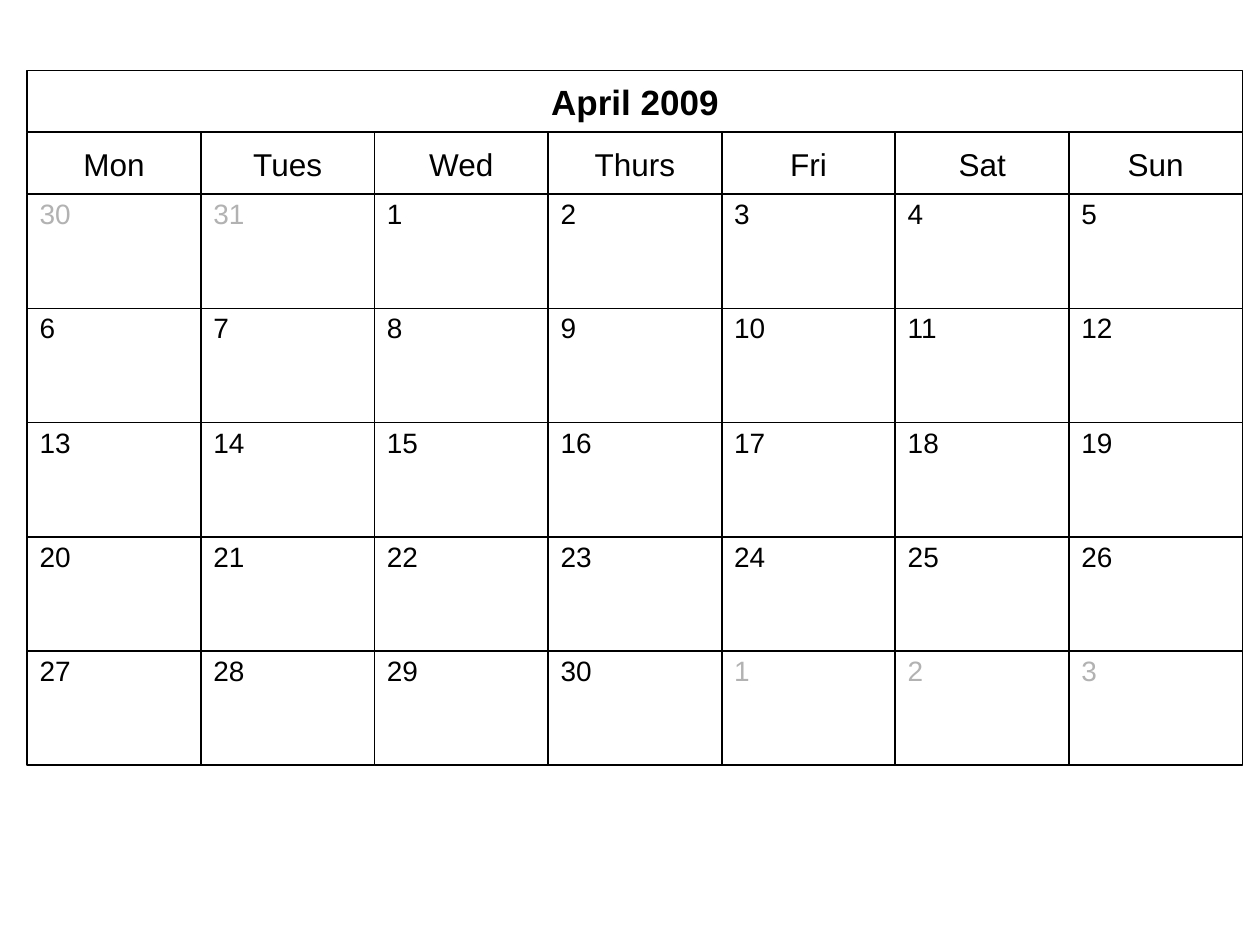
from pptx import Presentation
from pptx.dml.color import RGBColor
from pptx.enum.shapes import MSO_SHAPE
from pptx.enum.text import MSO_ANCHOR, PP_ALIGN
from pptx.util import Cm, Pt

RECTANGLE = MSO_SHAPE.RECTANGLE
TOP, MIDDLE = MSO_ANCHOR.TOP, MSO_ANCHOR.MIDDLE
LEFT, CENTER = PP_ALIGN.LEFT, PP_ALIGN.CENTER

COLORS = {"paper": "FFFFFF", "ink": "000000", "other_month": "B2B2B2"}

MONTH = "April 2009"
WEEKDAYS = ["Mon", "Tues", "Wed", "Thurs", "Fri", "Sat", "Sun"]
PREVIOUS_DAYS = [30, 31]
MONTH_DAYS = list(range(1, 31))
NEXT_DAYS = [1, 2, 3]

GRID_LEFT, GRID_TOP = 0.55, 1.42
DAY_WIDTH, DAY_HEIGHT = 3.5, 2.3
HEADER_HEIGHT = 1.25
HANGING = Cm(0.95)

FRAME_FORMAT = {
    "margin_left": Cm(0.25),
    "margin_right": Cm(0.25),
    "margin_top": Cm(0.05),
    "margin_bottom": Cm(0.05),
    "word_wrap": True,
}
MONTH_FONT = {"name": "Arial", "size": Pt(20), "bold": True}
WEEKDAY_FONT = {"name": "Arial", "size": Pt(18)}
DAY_FONT = {"name": "Arial", "size": Pt(16)}


def color(name):
    return RGBColor.from_string(COLORS[name])


def apply_format(target, values):
    for attribute, value in values.items():
        setattr(target, attribute, value)


def add_box(slide, text, box, font, anchor=MIDDLE, alignment=CENTER, ink="ink"):
    cell = slide.shapes.add_shape(RECTANGLE, *(Cm(length) for length in box))
    cell.shadow.inherit = False
    cell.fill.solid()
    cell.fill.fore_color.rgb = color("paper")
    cell.line.color.rgb = color("ink")
    cell.line.width = Pt(1)

    frame = cell.text_frame
    apply_format(frame, FRAME_FORMAT)
    frame.vertical_anchor = anchor
    label = frame.paragraphs[0]
    label.alignment = alignment
    indents = label._p.get_or_add_pPr()
    indents.set("marL", str(HANGING))
    indents.set("indent", str(-HANGING))
    run = label.add_run()
    run.text = text
    apply_format(run.font, font)
    run.font.color.rgb = color(ink)


def add_headers(slide):
    weekday_top = GRID_TOP + HEADER_HEIGHT
    for column, weekday in reversed(list(enumerate(WEEKDAYS))):
        left = GRID_LEFT + column * DAY_WIDTH
        add_box(slide, weekday, (left, weekday_top, DAY_WIDTH, HEADER_HEIGHT),
                WEEKDAY_FONT)
    month_width = len(WEEKDAYS) * DAY_WIDTH
    add_box(slide, MONTH, (GRID_LEFT, GRID_TOP, month_width, HEADER_HEIGHT),
            MONTH_FONT)


def add_days(slide):
    days = [(day, "other_month") for day in PREVIOUS_DAYS]
    days += [(day, "ink") for day in MONTH_DAYS]
    days += [(day, "other_month") for day in NEXT_DAYS]
    first_week_top = GRID_TOP + 2 * HEADER_HEIGHT
    for position, (day, ink) in reversed(list(enumerate(days))):
        week, column = divmod(position, len(WEEKDAYS))
        left = GRID_LEFT + column * DAY_WIDTH
        top = first_week_top + week * DAY_HEIGHT
        add_box(slide, str(day), (left, top, DAY_WIDTH, DAY_HEIGHT),
                DAY_FONT, TOP, LEFT, ink)


def main():
    presentation = Presentation()
    presentation.slide_width = Cm(25.4)
    presentation.slide_height = Cm(19.05)
    slide = presentation.slides.add_slide(presentation.slide_layouts[6])
    add_headers(slide)
    add_days(slide)
    presentation.save("out.pptx")


if __name__ == "__main__":
    main()
